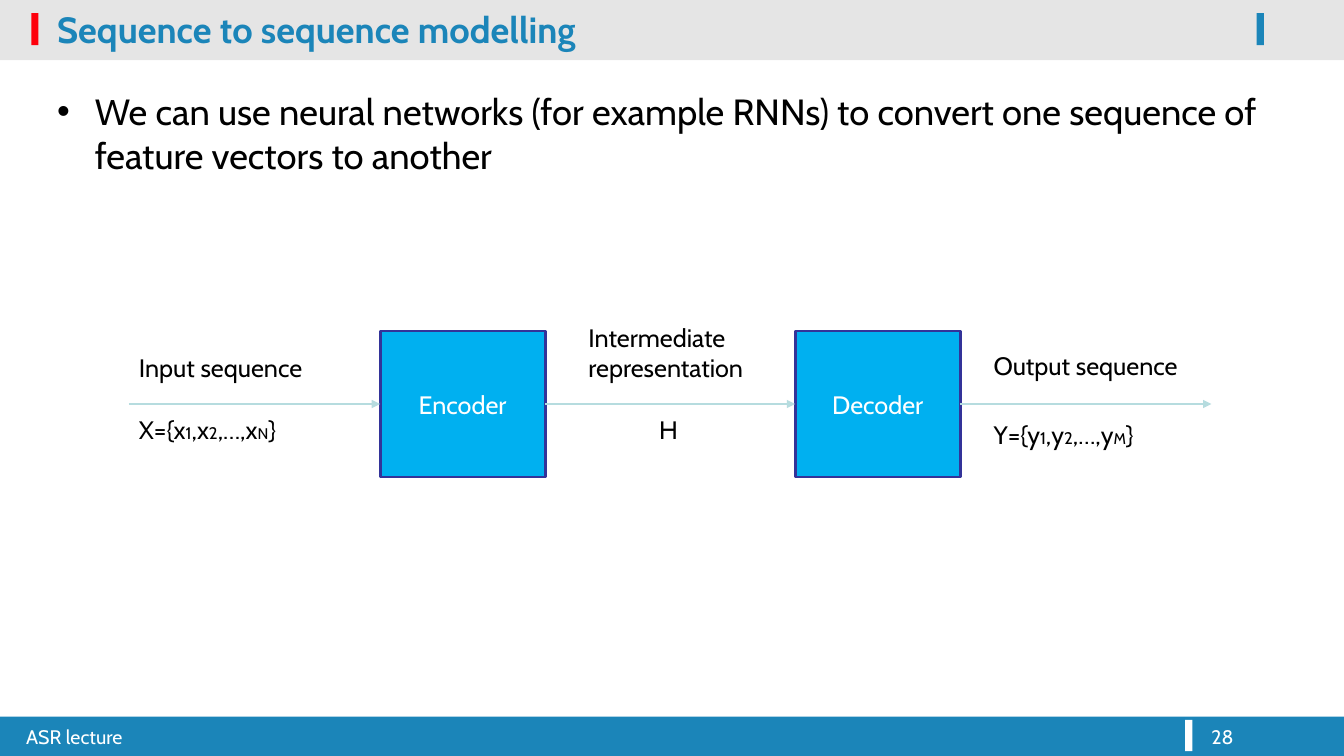
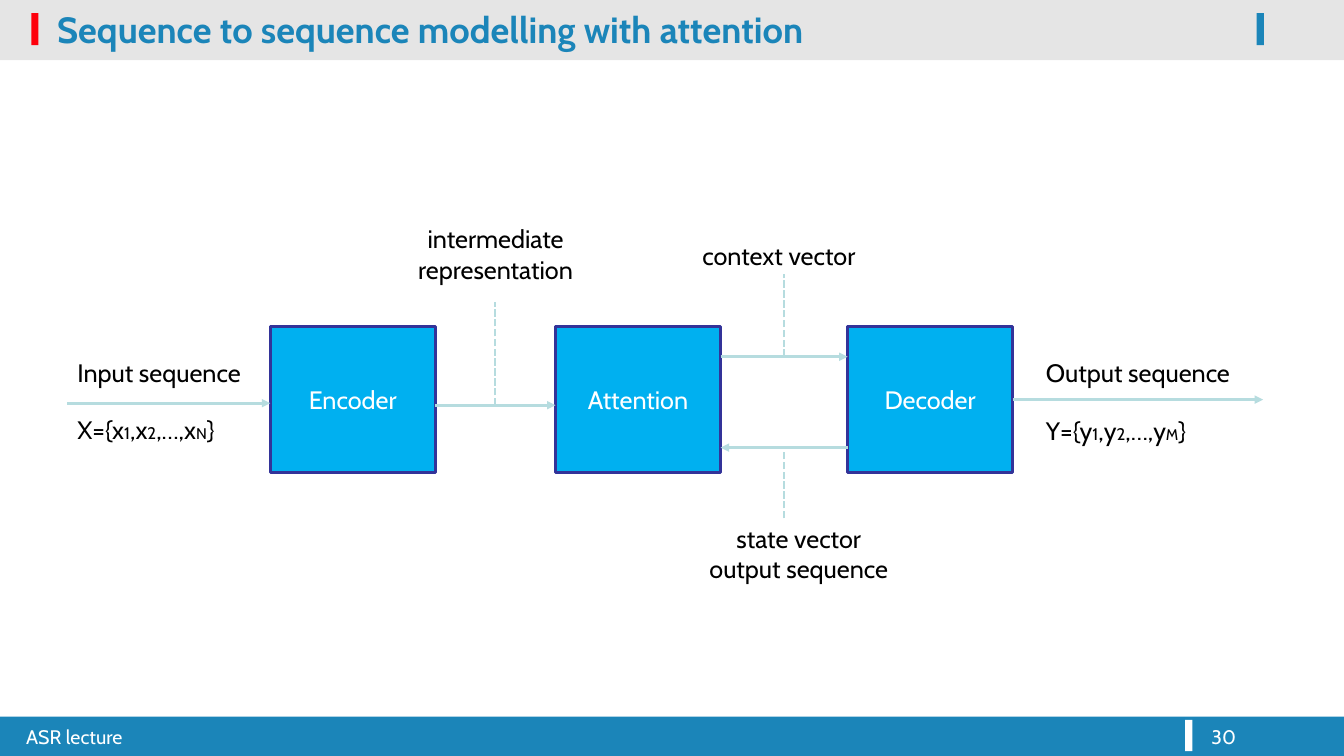
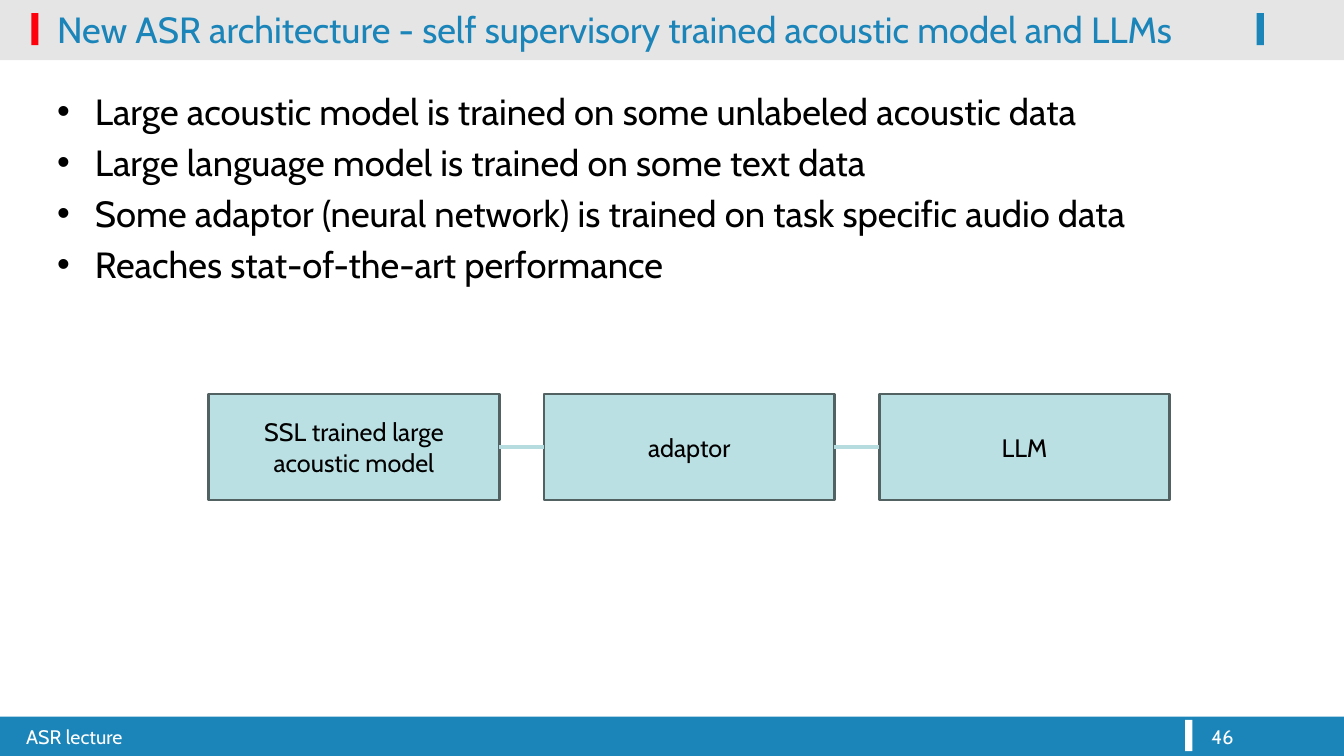
from lxml.etree import SubElement
from pptx import Presentation
from pptx.dml.color import RGBColor
from pptx.enum.dml import MSO_LINE
from pptx.enum.shapes import MSO_CONNECTOR, MSO_SHAPE
from pptx.enum.text import MSO_ANCHOR, PP_ALIGN
from pptx.oxml.ns import qn
from pptx.util import Cm, Pt

# Shared look; lengths in cm
FONT = "Cabin"
WIDTH, HEIGHT = 33.87, 19.05
BLUE, RED, WHITE, BLACK = "1B85B9", "FE000C", "FFFFFF", "000000"
LINK = "B6DCDF"
TOP, LEFT, BOTTOM, RIGHT = range(4)
FOOTER = "ASR lecture"

# Bands and marks: left, top, width, height, colour, opacity in percent
BANDS = [
    (0, 1.42, WIDTH, 0.1, BLACK, 10),
    (0, 18.06, WIDTH, 0.99, BLUE, 100),
    (0, 0, WIDTH, 1.42, BLACK, 10),
    (0.79, 0.33, 0.18, 0.81, RED, 100),
    (31.67, 0.33, 0.18, 0.81, BLUE, 100),
    (29.87, 18.14, 0.18, 0.79, WHITE, 100),
]

# Box styles: width, height, fill, outline, text colour
MODULE = (4.16, 3.68, "00B0F0", "333399", WHITE)
STAGE = (7.32, 2.67, "BBE0E3", "526263", BLACK)

# Link styles: width in points, dashed, arrowhead
ARROW = (2, False, True)
POINTER = (1.75, True, False)
JOIN = (2.5, False, False)

# Symbols between underscores are set small
INPUT = "X={x_1_,x_2_,…,x_N_}"
OUTPUT = "Y={y_1_,y_2_,…,y_M_}"

# Boxes: name to left edge. Links: two ends, each a point or (box, side).
# Labels: left, top, width, text, centred
SLIDES = [
    {
        "title": "Sequence to sequence modelling", "bold": True, "number": "28",
        "bullets": ["We can use neural networks (for example RNNs) to convert "
                    "one sequence of feature vectors to another"],
        "style": MODULE, "top": 8.34,
        "boxes": {"Encoder": 9.58, "Decoder": 20.04},
        "links": [
            ((3.25, 10.18), ("Encoder", LEFT), ARROW),
            (("Encoder", RIGHT), ("Decoder", LEFT), ARROW),
            (("Decoder", RIGHT), (30.53, 10.18), ARROW),
        ],
        "labels": [
            (3.25, 8.76, 4.9, "Input sequence", False),
            (3.25, 10.31, 6.05, INPUT, False),
            (14.58, 8, 4.6, "Intermediate\nrepresentation", False),
            (16.36, 10.31, 1.42, "H", False),
            (24.79, 8.71, 5.33, "Output sequence", False),
            (24.79, 10.44, 6.05, OUTPUT, False),
        ],
    },
    {
        "title": "Sequence to sequence modelling with attention",
        "bold": True, "number": "30", "bullets": [],
        "style": MODULE, "top": 8.23,
        "boxes": {"Encoder": 6.81, "Attention": 14, "Decoder": 21.36},
        "links": [
            ((1.7, 10.16), (6.81, 10.16), ARROW),
            ((10.97, 10.21), (14, 10.21), ARROW),
            ((18.16, 8.99), (21.36, 8.99), ARROW),
            ((21.36, 11.28), (18.16, 11.28), ARROW),
            (("Decoder", RIGHT), (31.83, 10.07), ARROW),
            ((12.47, 10.21), (12.47, 7.62), POINTER),
            ((19.76, 8.99), (19.76, 6.91), POINTER),
            ((19.76, 13.06), (19.76, 11.35), POINTER),
        ],
        "labels": [
            (1.7, 8.89, 4.9, "Input sequence", False),
            (1.7, 10.31, 6.05, INPUT, False),
            (10.19, 5.51, 4.6, "intermediate\nrepresentation", True),
            (17.45, 5.94, 4.52, "context vector", False),
            (17.53, 13.06, 5.2, "state vector\noutput sequence", True),
            (26.11, 8.89, 5.33, "Output sequence", False),
            (26.11, 10.34, 6.05, OUTPUT, False),
        ],
    },
    {
        "title": "New ASR architecture - self supervisory trained acoustic "
                 "model and LLMs",
        "bold": False, "number": "46",
        "bullets": [
            "Large acoustic model is trained on some unlabeled acoustic data",
            "Large language model is trained on some text data",
            "Some adaptor (neural network) is trained on task specific audio data",
            "Reaches stat-of-the-art performance",
        ],
        "style": STAGE, "top": 9.93,
        "boxes": {"SSL trained large acoustic model": 5.26,
                  "adaptor": 13.71, "LLM": 22.16},
        "links": [
            (("SSL trained large acoustic model", RIGHT), ("adaptor", LEFT), JOIN),
            (("adaptor", RIGHT), ("LLM", LEFT), JOIN),
        ],
        "labels": [],
    },
]


def colour(value):
    return RGBColor.from_string(value)


def style_run(run, size, ink, bold=False):
    run.font.name = FONT
    run.font.size = Pt(size)
    run.font.color.rgb = colour(ink)
    run.font.bold = bold


def add_text(slide, left, top, width, height, text, size, ink=BLACK, bold=False):
    frame = slide.shapes.add_textbox(
        Cm(left), Cm(top), Cm(width), Cm(height)).text_frame
    frame.word_wrap = True
    frame.text = text
    for paragraph in frame.paragraphs:
        for run in paragraph.runs:
            style_run(run, size, ink, bold)
    return frame


def add_rect(slide, left, top, width, height, fill, opacity=100):
    rect = slide.shapes.add_shape(
        MSO_SHAPE.RECTANGLE, Cm(left), Cm(top), Cm(width), Cm(height))
    rect.shadow.inherit = False
    rect.fill.solid()
    rect.fill.fore_color.rgb = colour(fill)
    rect.line.fill.background()
    if opacity < 100:
        tint = rect.fill._xPr.find(".//" + qn("a:srgbClr"))
        SubElement(tint, qn("a:alpha"), val=str(opacity * 1000))
    return rect


def add_frame(slide, content):
    """Bands, title and footer."""
    for band in BANDS:
        add_rect(slide, *band)
    title = add_text(slide, 1.19, 0, 30.12, 1.45, content["title"], 26, BLUE,
                     content["bold"])
    title.vertical_anchor = MSO_ANCHOR.MIDDLE
    add_text(slide, 0.41, 18.14, 29.06, 0.91, FOOTER, 14, WHITE)
    add_text(slide, 30.28, 18.14, 3.07, 0.91, content["number"], 14, WHITE)


def add_bullets(slide, bullets):
    body = add_text(slide, 1.19, 2.13, 32, 1.3 * len(bullets) + 1.2,
                    "\n".join(bullets), 26)
    for paragraph in body.paragraphs:
        paragraph.space_before = Pt(5.2)
        properties = paragraph._p.get_or_add_pPr()
        properties.set("marL", str(Cm(0.95)))
        properties.set("indent", str(-Cm(0.95)))
        SubElement(properties, qn("a:buFont"), typeface="Arial")
        SubElement(properties, qn("a:buChar"), char="•")


def add_box(slide, left, top, name, style):
    width, height, fill, outline, ink = style
    box = add_rect(slide, left, top, width, height, fill)
    box.line.color.rgb = colour(outline)
    box.line.width = Pt(2)
    frame = box.text_frame
    frame.word_wrap = True
    frame.vertical_anchor = MSO_ANCHOR.MIDDLE
    frame.text = name
    frame.paragraphs[0].alignment = PP_ALIGN.CENTER
    style_run(frame.paragraphs[0].runs[0], 18, ink)
    return box


def add_link(slide, boxes, start, end, style):
    points = [(0, 0) if p[0] in boxes else p for p in (start, end)]
    link = slide.shapes.add_connector(
        MSO_CONNECTOR.STRAIGHT, *(Cm(v) for point in points for v in point))
    for place, connect in ((start, link.begin_connect), (end, link.end_connect)):
        if place[0] in boxes:
            connect(boxes[place[0]], place[1])
    width, dashed, arrowhead = style
    link.line.color.rgb = colour(LINK)
    link.line.width = Pt(width)
    if dashed:
        link.line.dash_style = MSO_LINE.SQUARE_DOT
    properties = link._element.spPr
    if arrowhead:
        SubElement(properties.find(qn("a:ln")), qn("a:tailEnd"), type="triangle")
    SubElement(properties, qn("a:effectLst"))


def add_label(slide, left, top, width, text, centred):
    lines = text.split("\n")
    frame = add_text(slide, left, top, width, 0.25 + 0.77 * len(lines), "", 18)
    for index, line in enumerate(lines):
        paragraph = frame.add_paragraph() if index else frame.paragraphs[0]
        paragraph.alignment = PP_ALIGN.CENTER if centred else PP_ALIGN.LEFT
        for order, piece in enumerate(line.split("_")):
            run = paragraph.add_run()
            run.text = piece
            small = 12 if piece.isdigit() else 11
            style_run(run, small if order % 2 else 18, BLACK)


def main():
    deck = Presentation()
    deck.slide_width, deck.slide_height = Cm(WIDTH), Cm(HEIGHT)
    for content in SLIDES:
        slide = deck.slides.add_slide(deck.slide_layouts[6])
        add_frame(slide, content)
        if content["bullets"]:
            add_bullets(slide, content["bullets"])
        # Diagram
        boxes = {name: add_box(slide, left, content["top"], name, content["style"])
                 for name, left in content["boxes"].items()}
        for link in content["links"]:
            add_link(slide, boxes, *link)
        for label in content["labels"]:
            add_label(slide, *label)
    deck.save("out.pptx")


if __name__ == "__main__":
    main()
